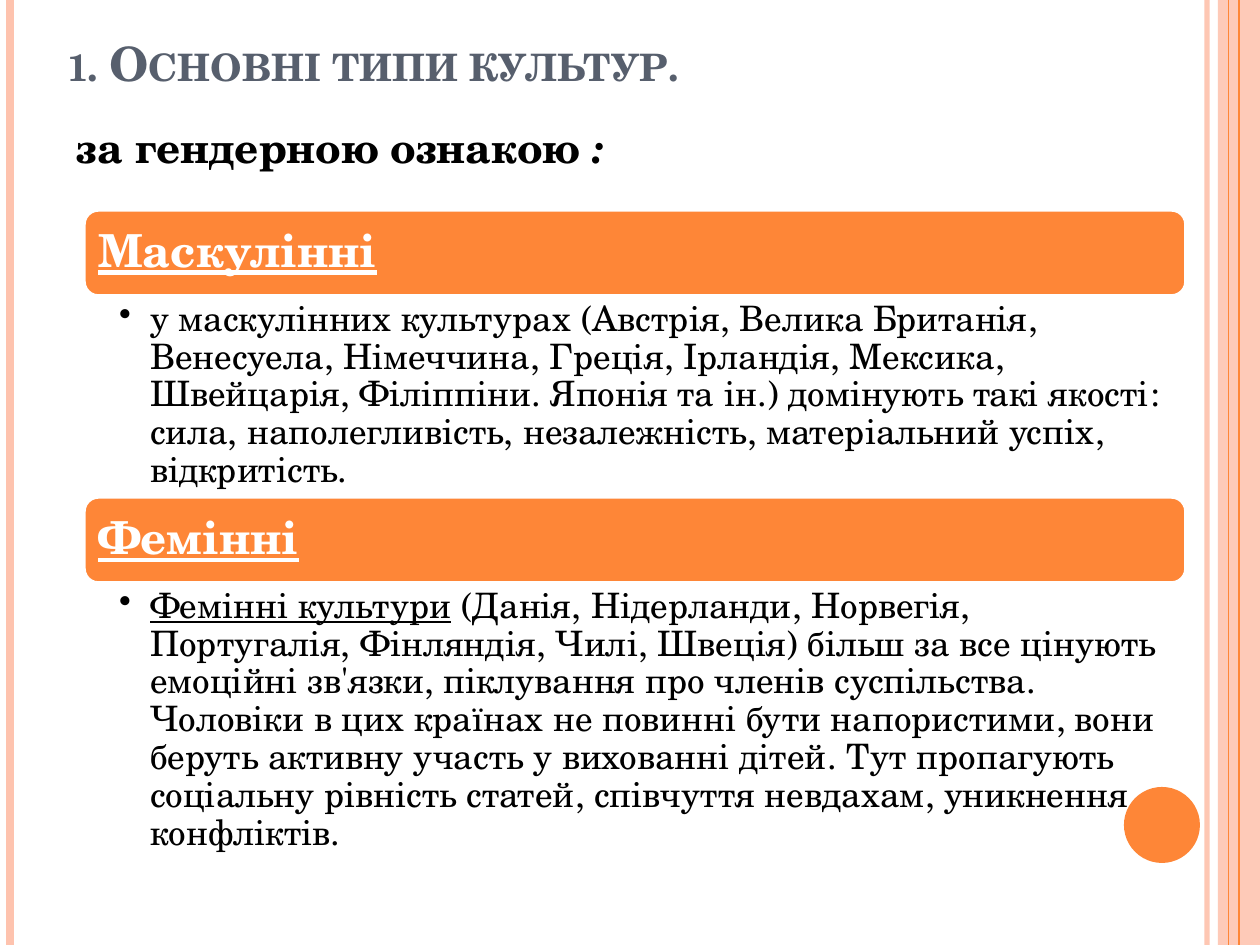
from lxml import etree
from pptx import Presentation
from pptx import util as u
from pptx.dml.color import RGBColor
from pptx.enum import shapes, text
from pptx.oxml.ns import qn

PX = 914400 / 126
WIDTH, HEIGHT = 1260, 945
FONT = "TeX Gyre Schola"
COLORS = {"orange": "FE8637", "peach": "FEC3AE", "slate": "575F6D",
          "black": "000000", "white": "FFFFFF"}

RULES = [(1207, 3, "peach", 93), (10, 4.5, "peach", 100),
         (1239, 1.5, "orange", 100), (1228.5, 0.75, "orange", 100)]

CULTURES = [
    ((84, 210, 1102, 287), "Маскулінні", "",
     "у маскулінних культурах (Австрія, Велика Британія, Венесуела, Німеччина, "
     "Греція, Ірландія, Мексика, Швейцарія, Філіппіни. Японія та ін.) домінують "
     "такі якості: сила, наполегливість, незалежність, матеріальний успіх, "
     "відкритість."),
    ((84, 497, 1102, 361), "Фемінні", "Фемінні культури",
     " (Данія, Нідерланди, Норвегія, Португалія, Фінляндія, Чилі, Швеція) більш "
     "за все цінують емоційні зв'язки, піклування про членів суспільства. "
     "Чоловіки в цих країнах не повинні бути напористими, вони беруть активну "
     "участь у вихованні дітей. Тут пропагують соціальну рівність статей, "
     "співчуття невдахам, уникнення конфліктів."),
]


def px(length):
    """Turn pixels into EMU."""
    return u.Emu(round(length * PX))


def box(*lengths):
    """Turn a pixel box into EMU."""
    return [px(length) for length in lengths]


def paint(fill, color, alpha=100):
    """Apply a solid colour with an optional opacity in percent."""
    fill.solid()
    fill.fore_color.rgb = RGBColor.from_string(COLORS[color])
    if alpha < 100:
        tint = fill._xPr.find(qn("a:solidFill"))[0]
        etree.SubElement(tint, qn("a:alpha")).set("val", str(alpha * 1000))


def style(paragraph, size, color, bold=False):
    """Set the shared font of a paragraph."""
    paragraph.alignment = text.PP_ALIGN.LEFT
    font = paragraph.font
    font.name, font.size, font.bold = FONT, u.Pt(size), bold
    font.color.rgb = RGBColor.from_string(COLORS[color])


def set_bullet(paragraph, indent, char=None):
    """Set a hanging indent in pixels and a bullet, or none."""
    properties = paragraph._p.get_or_add_pPr()
    properties.set("marL", str(px(indent)))
    properties.set("indent", str(-px(indent)))
    bullet = etree.Element(qn("a:buChar" if char else "a:buNone"))
    if char:
        bullet.set("char", char)
    properties.find(qn("a:defRPr")).addprevious(bullet)


def set_frame(frame, insets, anchor):
    """Wrap a text frame with pixel insets and an anchor."""
    frame.word_wrap = True
    frame.auto_size = text.MSO_AUTO_SIZE.NONE
    frame.vertical_anchor = anchor
    (frame.margin_left, frame.margin_top,
     frame.margin_right, frame.margin_bottom) = box(*insets)


def place(placeholder, bounds):
    """Move a placeholder to a pixel box."""
    (placeholder.left, placeholder.top,
     placeholder.width, placeholder.height) = box(*bounds)


def add_plain(slide, preset, bounds, color, alpha=100):
    """Add a filled preset shape without outline or shadow."""
    shape = slide.shapes.add_shape(preset, *box(*bounds))
    shape.shadow.inherit = False
    paint(shape.fill, color, alpha)
    shape.line.fill.background()
    return shape


def add_frame(slide):
    """Draw the vertical rules, side band and circle."""
    add_plain(slide, shapes.MSO_SHAPE.RECTANGLE, (1218, 0, 42, HEIGHT), "peach", 87)
    for x, weight, color, alpha in RULES:
        rule = slide.shapes.add_connector(
            shapes.MSO_CONNECTOR.STRAIGHT, *box(x, 0, x, HEIGHT))
        rule.line.width = u.Pt(weight)
        paint(rule.line.fill, color, alpha)
        etree.SubElement(rule._element.spPr, qn("a:effectLst"))
    add_plain(slide, shapes.MSO_SHAPE.OVAL, (1124, 787, 76, 76), "orange")


def fill_title(title, bounds):
    """Write the small-caps title."""
    place(title, bounds)
    title.text_frame.text = "1. Основні типи культур."
    set_frame(title.text_frame, (13, 6, 13, 6), text.MSO_ANCHOR.BOTTOM)
    heading = title.text_frame.paragraphs[0]
    style(heading, 27, "slate", True)
    heading._p.pPr.find(qn("a:defRPr")).set("cap", "small")


def fill_criterion(body, bounds):
    """Write the criterion by which cultures are divided."""
    place(body, bounds)
    set_frame(body.text_frame, (13, 6, 13, 6), text.MSO_ANCHOR.TOP)
    criterion = body.text_frame.paragraphs[0]
    criterion.add_run().text = "за гендерною ознакою "
    colon = criterion.add_run()
    colon.text, colon.font.italic = ":", True
    criterion.space_before = u.Pt(6)
    style(criterion, 24, "black", True)
    set_bullet(criterion, 38)


def add_culture(slide, bounds, name, lead, description):
    """Add a culture's header bar and its description below."""
    left, top, width, height = bounds
    bar = 86
    header = add_plain(slide, shapes.MSO_SHAPE.ROUNDED_RECTANGLE,
                       (left, top, width, bar), "orange")
    paint(header.line.fill, "white")
    header.line.width = u.Pt(2)
    set_frame(header.text_frame, (10, 10, 10, 10), text.MSO_ANCHOR.MIDDLE)
    label = header.text_frame.paragraphs[0]
    label.text, label.line_spacing = name, 0.9
    style(label, 26, "white", True)
    label.font.underline = True

    details = slide.shapes.add_textbox(*box(left, top + bar, width, height - bar))
    set_frame(details.text_frame, (35, 5, 25, 5), text.MSO_ANCHOR.TOP)
    traits = details.text_frame.paragraphs[0]
    traits.level, traits.line_spacing = 1, 0.9
    if lead:
        term = traits.add_run()
        term.text, term.font.underline = lead, True
    traits.add_run().text = description
    style(traits, 20, "black")
    set_bullet(traits, 31, "•")


def main():
    """Build and save the slide."""
    deck = Presentation()
    deck.slide_width, deck.slide_height = box(WIDTH, HEIGHT)
    slide = deck.slides.add_slide(deck.slide_layouts[1])
    add_frame(slide)
    fill_title(slide.shapes.title, (54, 26, 1030, 71))
    fill_criterion(slide.placeholders[1], (64, 116, 1030, 529))
    for culture in CULTURES:
        add_culture(slide, *culture)
    deck.save("out.pptx")


if __name__ == "__main__":
    main()
